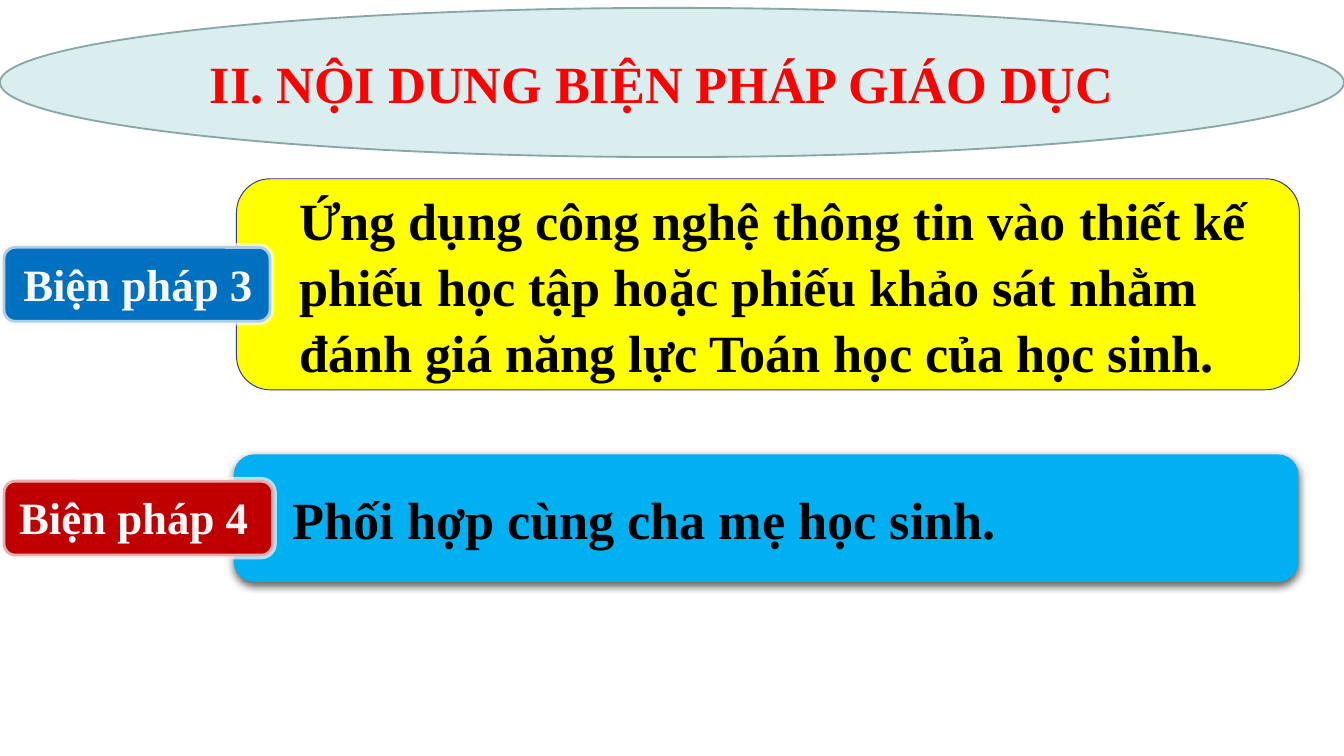
from lxml import etree
from pptx import Presentation
from pptx import util as u
from pptx.dml.color import RGBColor
from pptx.enum import shapes, text
from pptx.oxml.ns import qn

COLORS = {
    "heading_fill": "DAEDEF", "heading_line": "8AA6A8", "heading_text": "FF0000",
    "yellow": "FFFF00", "navy": "333399", "sky": "00B0F0",
    "blue": "0070C0", "red": "C00000", "light": "F8F8F8", "black": "000000",
}
FONT = "Times New Roman"
ROUNDED = shapes.MSO_SHAPE.ROUNDED_RECTANGLE


def rgb(color):
    return RGBColor.from_string(COLORS[color])


def add_alpha(color_element, percent):
    etree.SubElement(color_element, qn("a:alpha"), val=str(percent * 1000))


class MeasureSlide:
    def __init__(self, slide):
        self.slide = slide

    def panel(self, kind, box, fill, line=None, width=1, corner=None):
        panel = self.slide.shapes.add_shape(kind, *map(u.Cm, box))
        panel.shadow.inherit = False
        panel.fill.solid()
        panel.fill.fore_color.rgb = rgb(fill)
        if line:
            panel.line.color.rgb = rgb(line)
            panel.line.width = u.Pt(width)
        else:
            panel.line.fill.background()
        if corner:
            panel.adjustments[0] = corner
        return panel

    def set_text(self, holder, lines, size, color, align, **frame_format):
        frame = holder.text_frame
        frame_format = {"word_wrap": True, **frame_format}
        for name, value in frame_format.items():
            setattr(frame, name, value)
        frame.text = "\n".join(lines)
        font_format = {"name": FONT, "size": u.Pt(size), "bold": True}
        for paragraph in frame.paragraphs:
            paragraph.alignment = align
            font = paragraph.runs[0].font
            for name, value in font_format.items():
                setattr(font, name, value)
            font.color.rgb = rgb(color)

    def heading(self, box, title):
        oval = self.panel(shapes.MSO_SHAPE.OVAL, box, "heading_fill", "heading_line")
        self.set_text(oval, [title], 28, "heading_text", text.PP_ALIGN.LEFT,
                      vertical_anchor=text.MSO_ANCHOR.MIDDLE)

    def description(self, box, lines, fill, line=None, spacing=1.0):
        panel = self.panel(ROUNDED, box, fill, line, 0.5, corner=0.16)
        self.set_text(panel, lines, 28, "black", text.PP_ALIGN.LEFT,
                      vertical_anchor=text.MSO_ANCHOR.MIDDLE,
                      margin_left=u.Cm(1), margin_right=u.Cm(0))
        for paragraph in panel.text_frame.paragraphs:
            paragraph.line_spacing = spacing
        return panel

    def badge(self, box, label_box, label, fill):
        """A coloured plate with a translucent rim, and its label on top."""
        plate = self.panel(ROUNDED, box, fill, "light", 3)
        rim = plate._element.spPr.find(qn("a:ln")).find(qn("a:solidFill"))
        add_alpha(rim[0], 70)
        caption = self.slide.shapes.add_textbox(*map(u.Cm, label_box))
        self.set_text(caption, [label], 24, "light", text.PP_ALIGN.CENTER)

    def drop_shadow(self, panel):
        effects = panel._element.spPr.find(qn("a:effectLst"))
        shadow = etree.SubElement(
            effects, qn("a:outerShdw"), blurRad=str(u.Pt(4.5)),
            dist=str(u.Pt(1.5)), dir="5400000", rotWithShape="0")
        add_alpha(etree.SubElement(shadow, qn("a:srgbClr"), val=COLORS["black"]), 63)


def main():
    deck = Presentation()
    deck.slide_width, deck.slide_height = u.Cm(25.4), u.Cm(14.29)
    page = MeasureSlide(deck.slides.add_slide(deck.slide_layouts[6]))

    page.description(
        (4.47, 3.38, 20.09, 3.99),
        ["Ứng dụng công nghệ thông tin vào thiết kế",
         "phiếu học tập hoặc phiếu khảo sát nhằm",
         "đánh giá năng lực Toán học của học sinh."],
        "yellow", "navy", spacing=1.05)
    cooperation = page.description(
        (4.42, 8.59, 20.12, 2.41), ["Phối hợp cùng cha mẹ học sinh."], "sky")
    page.drop_shadow(cooperation)

    page.badge((0.05, 4.65, 5.08, 1.45), (0.18, 4.72, 4.85, 1.27), "Biện pháp 3", "blue")
    page.badge((0.05, 9.07, 5.13, 1.45), (0.05, 9.14, 4.95, 1.27), "Biện pháp 4", "red")
    page.heading((0, 0.15, 25.4, 2.82), "II. NỘI DUNG BIỆN PHÁP GIÁO DỤC")
    deck.save("out.pptx")


if __name__ == "__main__":
    main()
